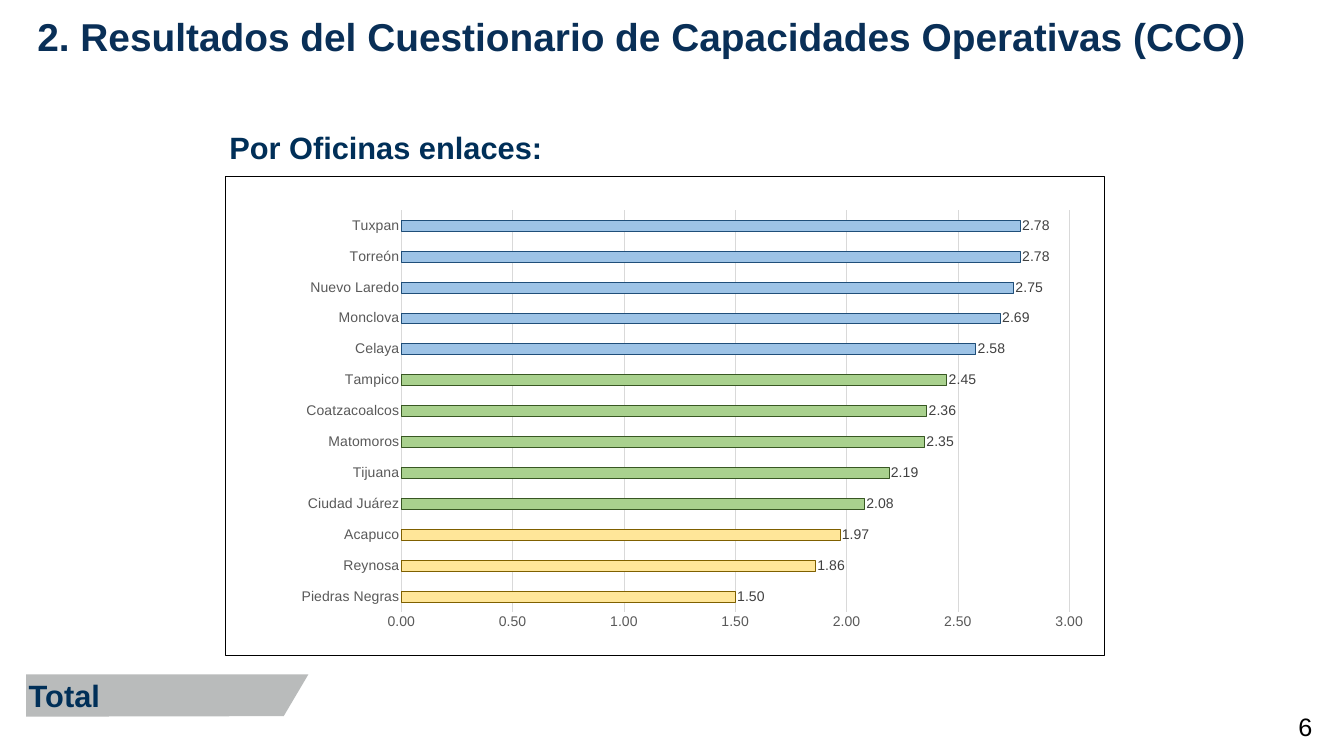
from lxml.etree import SubElement
from pptx import Presentation
from pptx.chart.data import CategoryChartData
from pptx.dml.color import RGBColor
from pptx.enum.chart import XL_CHART_TYPE, XL_LABEL_POSITION, XL_TICK_MARK
from pptx.enum.text import MSO_ANCHOR, MSO_AUTO_SIZE, PP_ALIGN
from pptx.oxml import parse_xml
from pptx.oxml.ns import nsdecls, qn
from pptx.util import Inches, Pt

NAVY = "002F58"
BLUE = ("9DC3E6", "1F4E79")
GREEN = ("A9D18E", "385723")
YELLOW = ("FFE699", "7F6000")

OFFICES = [
    ("Piedras Negras", 1.50, YELLOW),
    ("Reynosa", 1.86, YELLOW),
    ("Acapuco", 1.97, YELLOW),
    ("Ciudad Juárez", 2.08, GREEN),
    ("Tijuana", 2.19, GREEN),
    ("Matomoros", 2.35, GREEN),
    ("Coatzacoalcos", 2.36, GREEN),
    ("Tampico", 2.45, GREEN),
    ("Celaya", 2.58, BLUE),
    ("Monclova", 2.69, BLUE),
    ("Nuevo Laredo", 2.75, BLUE),
    ("Torreón", 2.78, BLUE),
    ("Tuxpan", 2.78, BLUE),
]


def color(hex_text):
    return RGBColor.from_string(hex_text)


def apply(target, values):
    for name, value in values.items():
        setattr(target, name, value)


class SlideBuilder:
    font_name = "Arial"
    grid_gray = "D9D9D9"
    thin = Pt(0.75)

    def __init__(self, presentation):
        self.width = presentation.slide_width
        self.height = presentation.slide_height
        self.slide = presentation.slides.add_slide(presentation.slide_layouts[5])

    def point(self, x, y):
        return round(self.width * x / 100), round(self.height * y / 100)

    def box(self, x, y, width, height):
        return *self.point(x, y), *self.point(width, height)

    def style_font(self, font, size, hex_text, bold=False):
        apply(font, {"name": self.font_name, "size": Pt(size), "bold": bold})
        font.color.rgb = color(hex_text)

    def style_line(self, line, hex_text):
        line.color.rgb = color(hex_text)
        line.width = self.thin

    def set_text(self, shape, text, size, hex_text, bold=True, inset=0.05,
                 anchor=MSO_ANCHOR.TOP, align=PP_ALIGN.LEFT, spacing=1.0):
        frame = shape.text_frame
        margin = Inches(inset)
        apply(frame, {
            "text": text, "word_wrap": True, "auto_size": MSO_AUTO_SIZE.NONE,
            "vertical_anchor": anchor, "margin_left": margin, "margin_right": margin,
            "margin_top": Inches(0.05), "margin_bottom": Inches(0.05),
        })
        paragraph = frame.paragraphs[0]
        apply(paragraph, {"alignment": align, "line_spacing": spacing})
        self.style_font(paragraph.runs[0].font, size, hex_text, bold)

    def title(self, text, place):
        shape = self.slide.shapes.title
        apply(shape, dict(zip(("left", "top", "width", "height"), self.box(*place))))
        self.set_text(shape, text, 55.5, "092F57", inset=0.1, spacing=0.9)

    def text(self, text, place, size, hex_text, **options):
        shape = self.slide.shapes.add_textbox(*self.box(*place))
        self.set_text(shape, text, size, hex_text, **options)

    def tag(self, text, corners):
        points = [self.point(*corner) for corner in corners]
        builder = self.slide.shapes.build_freeform(*points[0])
        builder.add_line_segments(points[1:], close=True)
        shape = builder.convert_to_shape()
        shape.shadow.inherit = False
        shape.fill.solid()
        shape.fill.fore_color.rgb = color("B9BBBB")
        shape.line.fill.background()
        self.set_text(shape, text, 44, NAVY, anchor=MSO_ANCHOR.MIDDLE)

    def bar_chart(self, rows, place, plot_area):
        data = CategoryChartData(number_format="0.00")
        data.categories = [name for name, _, _ in rows]
        data.add_series("Series 1", [value for _, value, _ in rows])
        chart = self.slide.shapes.add_chart(
            XL_CHART_TYPE.BAR_CLUSTERED, *self.box(*place), data).chart
        apply(chart, {"has_legend": False, "has_title": False})
        self.style_font(chart.font, 20, "000000")
        self.style_axes(chart)
        self.style_bars(chart.plots[0], rows)
        self.frame_chart(chart, plot_area)

    def style_axes(self, chart):
        for axis in (chart.category_axis, chart.value_axis):
            apply(axis, {"major_tick_mark": XL_TICK_MARK.NONE,
                         "minor_tick_mark": XL_TICK_MARK.NONE})
            self.style_font(axis.tick_labels.font, 20, "595959")
        self.style_line(chart.category_axis.format.line, self.grid_gray)
        axis = chart.value_axis
        apply(axis, {"minimum_scale": 0, "maximum_scale": 3, "major_unit": 0.5,
                     "has_major_gridlines": True})
        axis.format.line.fill.background()
        self.style_line(axis.major_gridlines.format.line, self.grid_gray)
        apply(axis.tick_labels, {"number_format": "0.00", "number_format_is_linked": False})

    def style_bars(self, plot, rows):
        apply(plot, {"gap_width": 182, "vary_by_categories": False, "has_data_labels": True})
        labels = plot.data_labels
        apply(labels, {"show_value": True, "number_format": "0.00",
                       "number_format_is_linked": False,
                       "position": XL_LABEL_POSITION.OUTSIDE_END})
        self.style_font(labels.font, 20, "404040")
        for index, (_, _, (fill, outline)) in enumerate(rows):
            bar = plot.series[0].points[index].format
            bar.fill.solid()
            bar.fill.fore_color.rgb = color(fill)
            self.style_line(bar.line, outline)

    def frame_chart(self, chart, plot_area):
        space = chart.element
        border = parse_xml(
            f'<c:spPr {nsdecls("c", "a")}><a:noFill/><a:ln w="{self.thin}"><a:solidFill>'
            '<a:srgbClr val="000000"/></a:solidFill></a:ln></c:spPr>')
        space.find(qn("c:chart")).addnext(border)
        area = space.find(".//" + qn("c:plotArea"))
        for old in area.findall(qn("c:layout")):
            area.remove(old)
        layout = parse_xml(f'<c:layout {nsdecls("c")}><c:manualLayout/></c:layout>')
        settings = {"layoutTarget": "inner", "xMode": "edge", "yMode": "edge",
                    **dict(zip("xywh", plot_area))}
        for name, value in settings.items():
            SubElement(layout[0], qn(f"c:{name}")).set("val", str(value))
        area.insert(0, layout)


def main():
    presentation = Presentation()
    apply(presentation, {"slide_width": Inches(26.67), "slide_height": Inches(15)})
    builder = SlideBuilder(presentation)
    builder.title("2. Resultados del Cuestionario de Capacidades Operativas (CCO)",
                  (2.4, 2.07, 94.6, 6.87))
    builder.text("6", (91.56, 93.4, 6.45, 5.4), 36, "000000", bold=False, inset=0.1,
                 anchor=MSO_ANCHOR.MIDDLE, align=PP_ALIGN.RIGHT)
    builder.bar_chart(OFFICES, (16.76, 23.33, 65.43, 63.33), (0.2, 0.07, 0.76, 0.84))
    builder.text("Por Oficinas enlaces:", (16.87, 16.67, 32.25, 7.6), 44, NAVY)
    builder.tag("Total", [(1.95, 89.2), (22.95, 89.2), (21.11, 94.73), (1.95, 94.8)])
    presentation.save("out.pptx")


if __name__ == "__main__":
    main()
